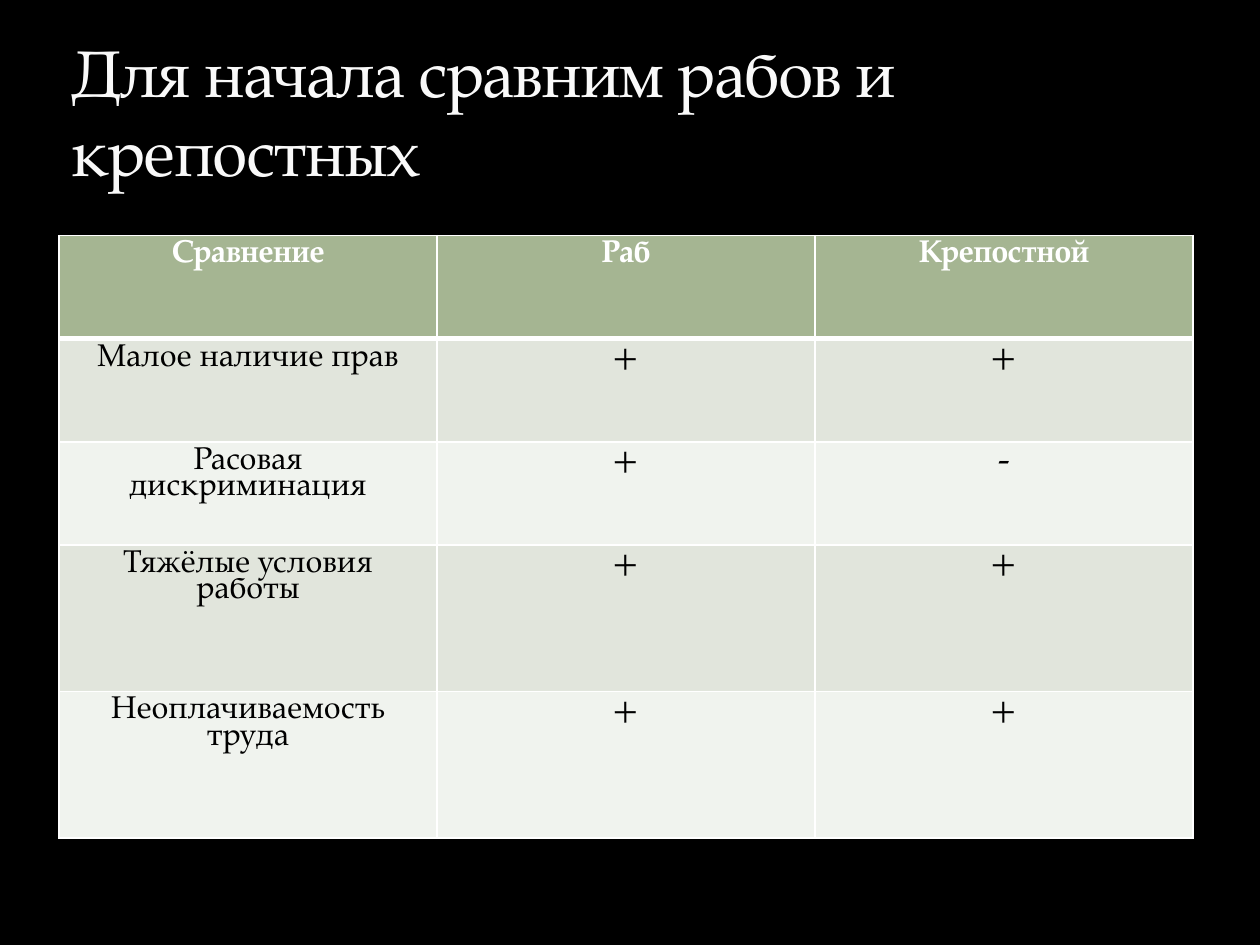
from pptx import Presentation
from pptx.dml.color import RGBColor
from pptx.enum.text import MSO_ANCHOR as Anchor, MSO_AUTO_SIZE as AutoSize, PP_ALIGN as Align
from pptx.oxml.ns import qn
from pptx.util import Cm, Pt
from lxml.etree import SubElement

TITLE = "Для начала сравним рабов и крепостных"
ROWS = [
    ("Сравнение", "Раб", "Крепостной"),
    ("Малое наличие прав", "+", "+"),
    ("Расовая дискриминация", "+", "-"),
    ("Тяжёлые условия работы", "+", "+"),
    ("Неоплачиваемость труда", "+", "+"),
]
ROW_HEIGHTS = [2.08, 2.08, 2.08, 2.95, 2.95]
LEFT, WIDTH = 1.19, 22.86
FONT = "TeX Gyre Pagella"
HEADER_FILL = "A5B592"
BAND_FILLS = ["F0F3EE", "E1E5DC"]


def color(value):
    return RGBColor.from_string(value)


def style_span(span, shade, **formats):
    span.font.name = FONT
    span.font.color.rgb = color(shade)
    for name, value in formats.items():
        setattr(span.font, name, value)


def add_borders(cell, bottom):
    properties = cell._tc.get_or_add_tcPr()
    widths = {"a:lnL": 1, "a:lnR": 1, "a:lnT": 1, "a:lnB": bottom}
    for position, (side, width) in enumerate(widths.items()):
        line = SubElement(properties, qn(side), w=str(Pt(width)))
        fill = SubElement(line, qn("a:solidFill"))
        SubElement(fill, qn("a:srgbClr"), val="FFFFFF")
        properties.insert(position, line)


def add_title(page):
    box = page.shapes.title
    place = {"left": LEFT, "top": 0.58, "width": WIDTH, "height": 3.38}
    for name, value in place.items():
        setattr(box, name, Cm(value))
    frame = box.text_frame
    formats = {"word_wrap": True, "auto_size": AutoSize.NONE, "vertical_anchor": Anchor.BOTTOM}
    for name, value in formats.items():
        setattr(frame, name, value)
    para = frame.paragraphs[0]
    para.alignment = Align.LEFT
    para.line_spacing = 1.0
    para.space_before = Pt(0)
    span = para.add_run()
    span.text = TITLE
    style_span(span, "F9F9F9", size=Pt(37.8))
    span.font._element.set("spc", "-100")


def fill_cell(cell, text, row, column):
    header = row == 0
    cell.fill.solid()
    cell.fill.fore_color.rgb = color(HEADER_FILL if header else BAND_FILLS[row % 2])
    add_borders(cell, 3 if header else 1)
    para = cell.text_frame.paragraphs[0]
    para.alignment = Align.CENTER
    para.line_spacing = 0.83
    span = para.add_run()
    span.text = text
    size = Pt(18 if header or column == 0 else 20)
    style_span(span, "FFFFFF" if header else "000000", size=size, bold=header)


def add_comparison(page):
    columns = len(ROWS[0])
    frame = page.shapes.add_table(
        len(ROWS), columns, Cm(LEFT), Cm(4.75), Cm(WIDTH), Cm(sum(ROW_HEIGHTS))
    )
    table = frame.table
    for column in table.columns:
        column.width = Cm(WIDTH / columns)
    for row, (texts, height) in enumerate(zip(ROWS, ROW_HEIGHTS)):
        table.rows[row].height = Cm(height)
        for column, text in enumerate(texts):
            fill_cell(table.cell(row, column), text, row, column)


def main():
    deck = Presentation()
    deck.slide_width, deck.slide_height = Cm(25.4), Cm(19.05)
    page = deck.slides.add_slide(deck.slide_layouts[5])
    page.background.fill.solid()
    page.background.fill.fore_color.rgb = color("000000")
    add_comparison(page)
    add_title(page)
    deck.save("out.pptx")


if __name__ == "__main__":
    main()
